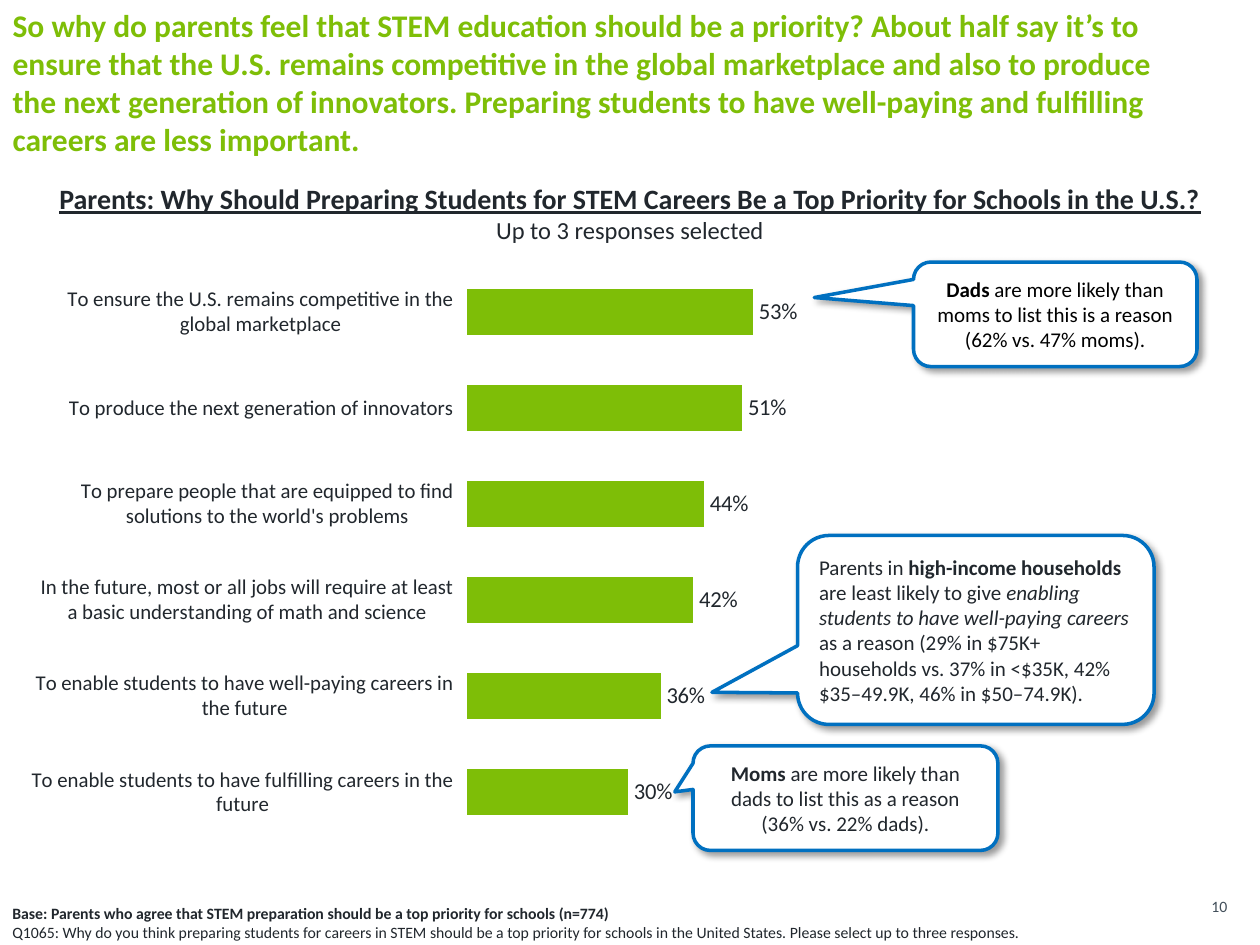
from lxml.etree import SubElement
from pptx import Presentation
from pptx.chart.data import CategoryChartData
from pptx.dml.color import RGBColor
from pptx.enum.chart import XL_CHART_TYPE as ChartType, XL_LABEL_POSITION as LabelPosition
from pptx.enum.chart import XL_TICK_MARK as TickMark
from pptx.enum.shapes import MSO_SHAPE as Shape
from pptx.enum.text import MSO_ANCHOR as Anchor, MSO_AUTO_SIZE as AutoSize, PP_ALIGN as Align
from pptx.oxml import parse_xml
from pptx.oxml.ns import nsdecls, qn
from pptx.util import Inches, Pt

COLORS = {"green": "7EBE07", "ink": "21272D", "gray": "424F5A",
          "blue": "0070C0", "white": "FFFFFF", "black": "000000"}
FONT = "Calibri"

TITLE = ("So why do parents feel that STEM education should be a priority? About half say it’s to "
         "ensure that the U.S. remains competitive in the global marketplace and also to produce "
         "the next generation of innovators. Preparing students to have well-paying and fulfilling "
         "careers are less important.")
HEADING = [
    ("Parents: Why Should Preparing Students for STEM Careers Be a Top Priority for Schools in the U.S.?",
     {"size": 16, "bold": True, "underline": True}),
    ("Up to 3 responses selected", {"size": 14}),
]
FOOTNOTE = [
    ("Base: Parents who agree that STEM preparation should be a top priority for schools (n=774)",
     {"size": 9, "bold": True}),
    ("Q1065: Why do you think preparing students for careers in STEM should be a top priority for "
     "schools in the United States. Please select up to three responses.", {"size": 9}),
]
REASONS = {
    "To enable students to have fulfilling careers in the future": 0.30,
    "To enable students to have well-paying careers in the future": 0.36,
    "In the future, most or all jobs will require at least a basic understanding of math and science": 0.42,
    "To prepare people that are equipped to find solutions to the world's problems": 0.44,
    "To produce the next generation of innovators": 0.51,
    "To ensure the U.S. remains competitive in the global marketplace": 0.53,
}
CALLOUTS = [
    ((6.33, 4.25, 2.83, 1.5), (-0.74, 0.33), Align.LEFT, "ink",
     [("Parents in ", ""), ("high-income households", "bold"), (" are least likely to give ", ""),
      ("enabling students to have well-paying careers ", "italic"),
      ("as a reason (29% in $75K+ households vs. 37% in <$35K, 42% $35–49.9K, "
       "46% in $50–74.9K).", "")]),
    ((7.25, 2.08, 2.25, 0.83), (-0.85, -0.16), Align.CENTER, "black",
     [("Dads ", "bold"),
      ("are more likely than moms to list this is a reason (62% vs. 47% moms).", "")]),
    ((5.5, 5.92, 2.42, 0.83), (-0.56, -0.06), Align.CENTER, "ink",
     [("Moms", "bold"),
      (" are more likely than dads to list this as a reason (36% vs. 22% dads).", "")]),
]


def rgb(name):
    """Return the named colour."""
    return RGBColor.from_string(COLORS[name])


def inches(box):
    """Turn a box in inches into lengths."""
    return [Inches(value) for value in box]


def style_font(font, size, color="ink", bold=False, underline=False):
    """Set the face, size, colour and weight of a font."""
    font.name, font.size = FONT, Pt(size)
    font.color.rgb = rgb(color)
    font.bold, font.underline = bold, underline


def add_title(page, box):
    """Place the headline in the title placeholder."""
    title = page.shapes.title
    title.left, title.top, title.width, title.height = inches(box)
    frame = title.text_frame
    frame.text = TITLE
    frame.word_wrap, frame.auto_size = True, AutoSize.NONE
    frame.vertical_anchor = Anchor.TOP
    para = frame.paragraphs[0]
    para.alignment = Align.LEFT
    style_font(para.font, 18, "green", bold=True)


def add_text(page, box, lines, align=Align.LEFT, anchor=Anchor.TOP):
    """Place a text box with one styled paragraph for each line."""
    frame = page.shapes.add_textbox(*inches(box)).text_frame
    frame.word_wrap, frame.vertical_anchor = True, anchor
    frame.text = "\n".join(text for text, _ in lines)
    for para, (_, style) in zip(frame.paragraphs, lines):
        para.alignment = align
        style_font(para.font, **style)


def add_reasons_chart(page, box):
    """Place the bar chart of reasons."""
    data = CategoryChartData(number_format="0%")
    data.categories = list(REASONS)
    data.add_series("Series 1", list(REASONS.values()))
    chart = page.shapes.add_chart(ChartType.BAR_CLUSTERED, *inches(box), data).chart
    chart.has_legend = chart.has_title = False
    style_font(chart.font, 18, "gray")

    reasons = chart.category_axis
    reasons.major_tick_mark = TickMark.OUTSIDE
    reasons.format.line.fill.background()
    style_font(reasons.tick_labels.font, 12)
    shares = chart.value_axis
    shares.visible = shares.has_major_gridlines = False
    shares.minimum_scale, shares.maximum_scale = 0, 0.6

    plot = chart.plots[0]
    plot.gap_width, plot.vary_by_categories = 101, False
    bars = plot.series[0].format
    bars.fill.solid()
    bars.fill.fore_color.rgb = rgb("green")
    bars.line.color.rgb, bars.line.width = rgb("white"), Pt(1)
    plot.has_data_labels = True
    labels = plot.data_labels
    labels.show_value, labels.position = True, LabelPosition.OUTSIDE_END
    labels.number_format, labels.number_format_is_linked = "0%", False
    style_font(labels.font, 13)
    set_plot_box(chart, x=0.43, y=0.07, w=0.33, h=0.93)


def set_plot_box(chart, **fractions):
    """Fix the inner plot area as fractions of the chart."""
    area = chart._chartSpace.find(".//" + qn("c:plotArea"))
    for layout in area.findall(qn("c:layout")):
        area.remove(layout)
    layout = parse_xml(f"<c:layout {nsdecls('c')}><c:manualLayout/></c:layout>")
    settings = {"layoutTarget": "inner", "xMode": "edge", "yMode": "edge", **fractions}
    for tag, value in settings.items():
        SubElement(layout[0], qn("c:" + tag), val=str(value))
    area.insert(0, layout)


def add_callout(page, box, tip, align, color, spans):
    """Place a rounded callout whose tip is offset from its centre."""
    callout = page.shapes.add_shape(Shape.ROUNDED_RECTANGULAR_CALLOUT, *inches(box))
    callout.adjustments[0], callout.adjustments[1] = tip
    callout.fill.solid()
    callout.fill.fore_color.rgb = rgb("white")
    callout.line.color.rgb, callout.line.width = rgb("blue"), Pt(2)
    add_shadow(callout)
    frame = callout.text_frame
    frame.word_wrap, frame.vertical_anchor = True, Anchor.MIDDLE
    para = frame.paragraphs[0]
    para.alignment = align
    style_font(para.font, 12, color)
    for text, emphasis in spans:
        span = para.add_run()
        span.text = text
        style_font(span.font, 12, color, bold=emphasis == "bold")
        span.font.italic = emphasis == "italic"


def add_shadow(shape):
    """Give a shape a soft shadow to the lower right."""
    shape.shadow.inherit = False
    effects = shape._element.spPr.find(qn("a:effectLst"))
    shadow = SubElement(effects, qn("a:outerShdw"), blurRad=str(Pt(4)), dist=str(Pt(3)),
                        dir=str(45 * 60000), algn="tl", rotWithShape="0")
    tint = SubElement(shadow, qn("a:srgbClr"), val=COLORS["black"])
    SubElement(tint, qn("a:alpha"), val="40000")


def main():
    """Build and save the slide."""
    deck = Presentation()
    deck.slide_width, deck.slide_height = Inches(10), Inches(7.5)
    page = deck.slides.add_slide(deck.slide_layouts[5])
    add_text(page, (0, 7.12, 10, 0.4), FOOTNOTE)
    add_reasons_chart(page, (0.25, 1.75, 7.92, 4.92))
    add_title(page, (0, 0, 9.42, 1.33))
    add_text(page, (0, 1.39, 10, 0.61), HEADING, Align.CENTER)
    for callout in CALLOUTS:
        add_callout(page, *callout)
    add_text(page, (9.17, 7.07, 0.67, 0.25), [("10", {"size": 9, "color": "gray"})],
             Align.RIGHT, Anchor.MIDDLE)
    deck.save("out.pptx")


if __name__ == "__main__":
    main()
